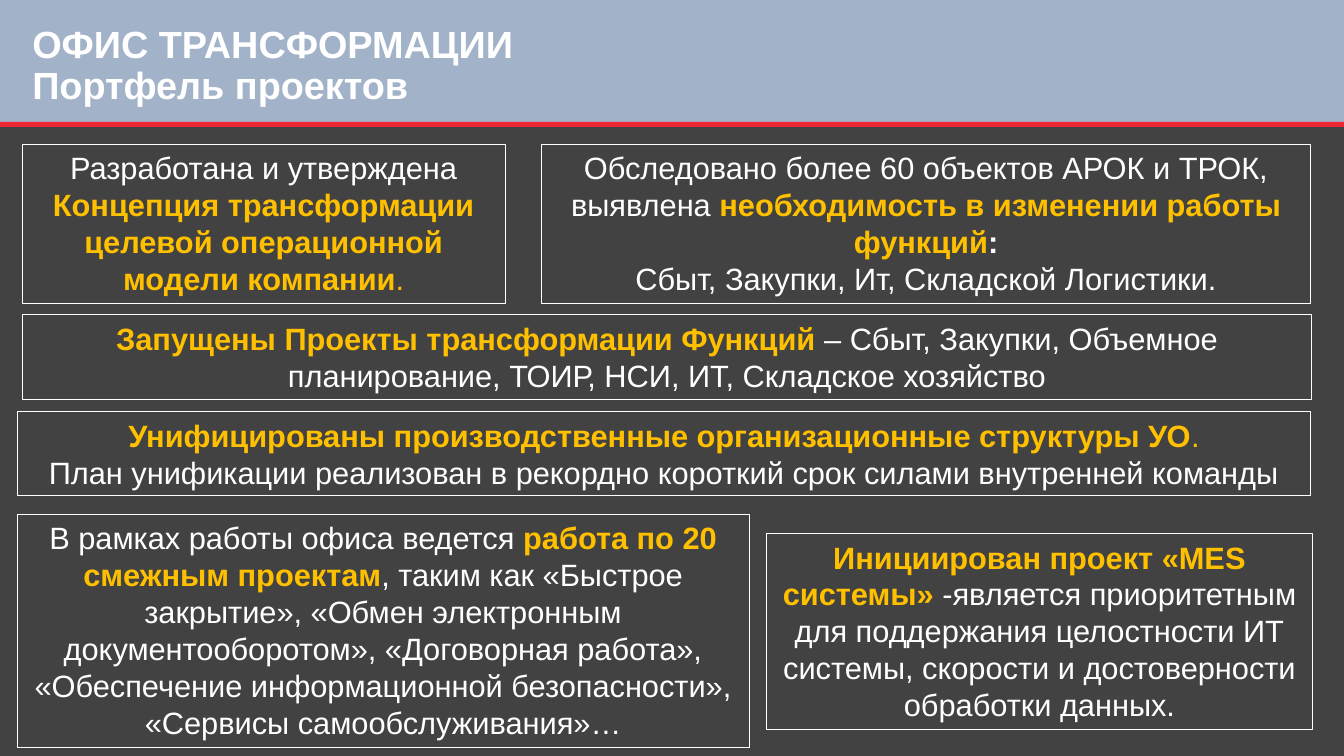
"""Build the transformation office project portfolio slide."""
from dataclasses import dataclass

from pptx import Presentation
from pptx.dml.color import RGBColor
from pptx.enum import shapes, text
from pptx.util import Inches, Pt


@dataclass(frozen=True)
class Theme:
    """Colours, font and type sizes of the slide."""
    font: str = "Arial"
    white: str = "FFFFFF"
    accent: str = "FFC000"
    header: str = "A2B2C8"
    rule: str = "EE2737"
    panel: str = "424242"
    title_size: float = 27
    body_size: float = 22
    border: float = 0.75


THEME = Theme()
PLAIN = (THEME.white, False)
STRONG = (THEME.white, True)
ACCENT = (THEME.accent, True)
ACCENT_PLAIN = (THEME.accent, False)

BANDS = [
    (0, 0, 13.33, 7.5, THEME.panel),
    (0, 0, 13.33, 1.23, THEME.header),
    (0, 1.21, 13.33, 0.05, THEME.rule),
]

TOP, MIDDLE = text.MSO_ANCHOR.TOP, text.MSO_ANCHOR.MIDDLE

CARDS = [
    ((0.22, 1.43, 4.79, 1.58), TOP, [
        [("Разработана и утверждена ", PLAIN),
         ("Концепция трансформации целевой операционной модели компании", ACCENT),
         (".", ACCENT_PLAIN)],
    ]),
    ((5.37, 1.43, 7.63, 1.58), TOP, [
        [("Обследовано более 60 объектов АРОК и ТРОК,", PLAIN)],
        [("выявлена ", PLAIN),
         ("необходимость в изменении работы функций", ACCENT),
         (":", STRONG)],
        [("Сбыт, Закупки, Ит, Складской Логистики.", PLAIN)],
    ]),
    ((0.22, 3.12, 12.79, 0.84), TOP, [
        [("Запущены Проекты трансформации Функций ", ACCENT),
         ("– Сбыт, Закупки, Объемное планирование, ТОИР, НСИ, ИТ, "
          "Складское хозяйство", PLAIN)],
    ]),
    ((0.17, 4.08, 12.83, 0.84), MIDDLE, [
        [("Унифицированы производственные организационные структуры УО", ACCENT),
         (".", ACCENT_PLAIN)],
        [("План унификации реализован в рекордно короткий срок "
          "силами внутренней команды", PLAIN)],
    ]),
    ((0.17, 5.1, 7.26, 2.32), TOP, [
        [("В рамках работы офиса ведется ", PLAIN),
         ("работа по 20 смежным проектам", ACCENT),
         (", таким как «Быстрое закрытие», «Обмен электронным "
          "документооборотом», «Договорная работа», «Обеспечение "
          "информационной безопасности», «Сервисы самообслуживания»…", PLAIN)],
    ]),
    ((7.6, 5.29, 5.42, 1.95), TOP, [
        [("Инициирован проект «MES системы» ", ACCENT),
         ("-является приоритетным для поддержания целостности ИТ системы, "
          "скорости и достоверности обработки данных.", PLAIN)],
    ]),
]


def format_run(run, size, color, bold):
    """Apply the theme font with a size, colour and weight."""
    run.font.name = THEME.font
    run.font.size = Pt(size)
    run.font.bold = bold
    run.font.color.rgb = RGBColor.from_string(color)


def add_rectangle(slide, left, top, width, height):
    """Add a rectangle without a shadow."""
    shape = slide.shapes.add_shape(
        shapes.MSO_SHAPE.RECTANGLE,
        Inches(left), Inches(top), Inches(width), Inches(height))
    shape.shadow.inherit = False
    return shape


def add_band(slide, left, top, width, height, color):
    """Add a filled background band."""
    shape = add_rectangle(slide, left, top, width, height)
    shape.fill.solid()
    shape.fill.fore_color.rgb = RGBColor.from_string(color)
    shape.line.fill.background()


def add_card(slide, box, anchor, lines):
    """Add an outlined card of centred paragraphs."""
    shape = add_rectangle(slide, *box)
    shape.fill.background()
    shape.line.color.rgb = RGBColor.from_string(THEME.white)
    shape.line.width = Pt(THEME.border)
    frame = shape.text_frame
    frame.word_wrap = True
    frame.auto_size = text.MSO_AUTO_SIZE.SHAPE_TO_FIT_TEXT
    frame.vertical_anchor = anchor
    for index, pieces in enumerate(lines):
        paragraph = frame.add_paragraph() if index else frame.paragraphs[0]
        paragraph.alignment = text.PP_ALIGN.CENTER
        for wording, style in pieces:
            run = paragraph.add_run()
            run.text = wording
            format_run(run, THEME.body_size, *style)


def set_title(slide, wording):
    """Place and format the title above the bands."""
    title = slide.shapes.title
    title.left, title.top = Inches(0.22), Inches(0.22)
    title.width, title.height = Inches(12.19), Inches(0.89)
    frame = title.text_frame
    frame.text = wording
    frame.word_wrap = True
    frame.auto_size = text.MSO_AUTO_SIZE.NONE
    frame.vertical_anchor = MIDDLE
    paragraph = frame.paragraphs[0]
    paragraph.alignment = text.PP_ALIGN.LEFT
    paragraph.line_spacing = 0.9
    for run in paragraph.runs:
        format_run(run, THEME.title_size, *STRONG)
    title.element.getparent().append(title.element)


def main():
    """Build and save the slide."""
    presentation = Presentation()
    presentation.slide_width = Inches(13.33)
    presentation.slide_height = Inches(7.5)
    slide = presentation.slides.add_slide(presentation.slide_layouts[5])
    for band in BANDS:
        add_band(slide, *band)
    set_title(slide, "ОФИС ТРАНСФОРМАЦИИ\vПортфель проектов")
    for card in CARDS:
        add_card(slide, *card)
    presentation.save("out.pptx")


if __name__ == "__main__":
    main()
